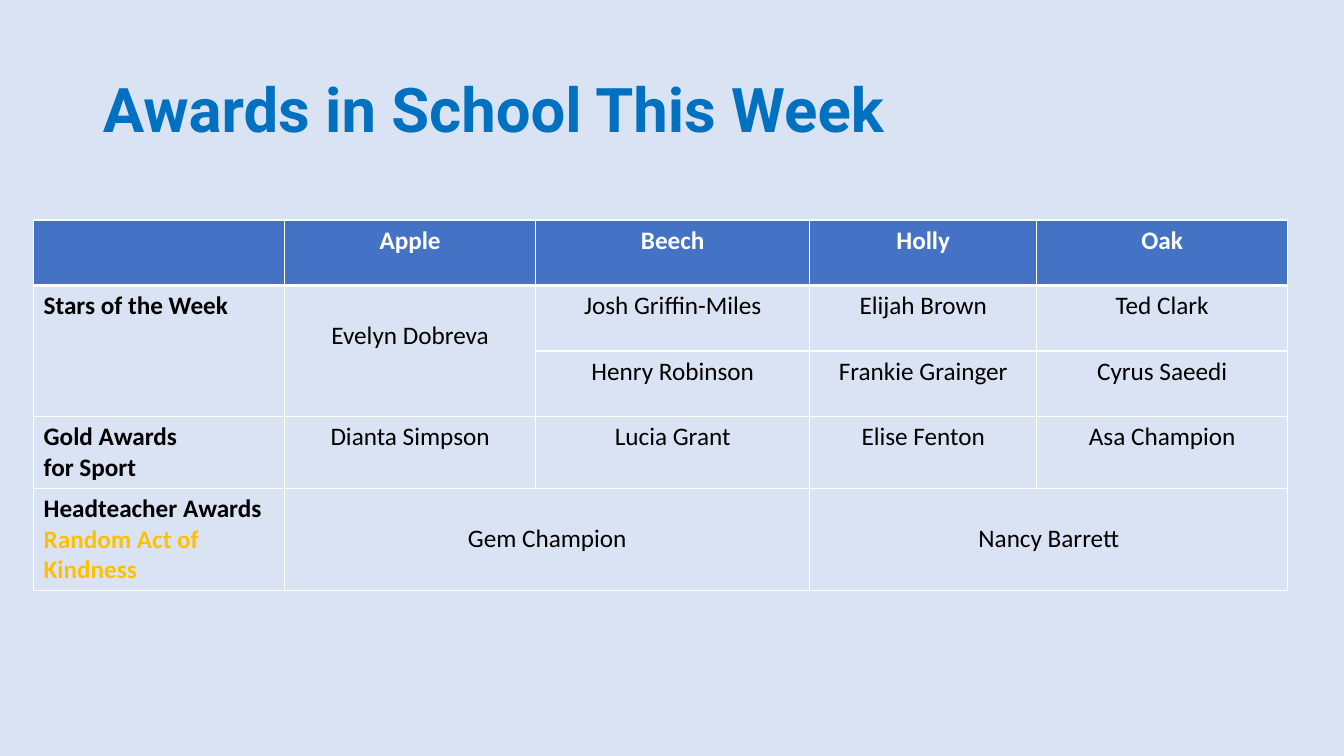
from lxml import etree
from pptx import Presentation
from pptx import util as u
from pptx.dml.color import RGBColor
from pptx.enum import text
from pptx.oxml import ns

PALE = RGBColor(0xDA, 0xE3, 0xF3)
BLUE = RGBColor(0x44, 0x72, 0xC4)
SKY = RGBColor(0x00, 0x70, 0xC0)
GOLD = RGBColor(0xFF, 0xC0, 0x00)
WHITE = RGBColor(0xFF, 0xFF, 0xFF)
BLACK = RGBColor(0, 0, 0)

WIDE, HIGH = u.Inches(13.33), u.Inches(7.5)
COLS = [2.49, 2.49, 2.72, 2.25, 2.49]
ROW = 0.65
LINE = 0.3

AWARDS = [
    ["", "Apple", "Beech", "Holly", "Oak"],
    ["Stars of the Week", "Evelyn Dobreva", "Josh Griffin-Miles", "Elijah Brown", "Ted Clark"],
    ["", "", "Henry Robinson", "Frankie Grainger", "Cyrus Saeedi"],
    ["Gold Awards\nfor Sport", "Dianta Simpson", "Lucia Grant", "Elise Fenton", "Asa Champion"],
    ["Headteacher Awards ", "Gem Champion", "", "Nancy Barrett", ""],
]
MERGES = [((1, 0), (2, 0)), ((1, 1), (2, 1)), ((4, 1), (4, 2)), ((4, 3), (4, 4))]
LOWERED = [(1, 1), (4, 1), (4, 3)]


def set_font(font, name, size, color, bold):
    font.name, font.size, font.bold = name, u.Pt(size), bold
    font.color.rgb = color


def add_title(slide, words):
    title = slide.shapes.title
    title.left, title.top = int(WIDE * 0.069), int(HIGH * 0.053)
    title.width, title.height = int(WIDE * 0.863), int(HIGH * 0.193)
    frame = title.text_frame
    frame.text = words
    frame.auto_size = text.MSO_AUTO_SIZE.NONE
    frame.vertical_anchor = text.MSO_ANCHOR.MIDDLE
    para = frame.paragraphs[0]
    para.alignment = text.PP_ALIGN.LEFT
    para.line_spacing = 0.9
    set_font(para.font, "Roboto", 44, SKY, True)


def add_edges(cell, row):
    props = cell._tc.get_or_add_tcPr()
    heavy = {0: "lnB", 1: "lnT"}.get(row)
    for side in ("lnL", "lnR", "lnT", "lnB"):
        points = 3 if side == heavy else 1
        edge = etree.SubElement(props, ns.qn("a:" + side), w=str(u.Pt(points)))
        fill = etree.SubElement(edge, ns.qn("a:solidFill"))
        etree.SubElement(fill, ns.qn("a:srgbClr"), val=str(WHITE))


def fill_cell(cell, row, col, words):
    add_edges(cell, row)
    cell.fill.solid()
    cell.fill.fore_color.rgb = PALE if row else BLUE
    if (row, col) in LOWERED:
        cell.margin_top = u.Inches(0.05 + LINE)
    if not words:
        return
    cell.text_frame.text = words
    for para in cell.text_frame.paragraphs:
        para.alignment = text.PP_ALIGN.CENTER if col else text.PP_ALIGN.LEFT
        set_font(para.font, "Calibri", 18, BLACK if row else WHITE, row == 0 or col == 0)


def add_awards(slide):
    frame = slide.shapes.add_table(
        len(AWARDS), len(COLS), int(WIDE * 0.025), int(HIGH * 0.291),
        u.Inches(sum(COLS)), u.Inches(ROW * len(AWARDS)))
    table = frame.table
    table.horz_banding = False
    for col, width in enumerate(COLS):
        table.columns[col].width = u.Inches(width)
    for row, names in enumerate(AWARDS):
        table.rows[row].height = u.Inches(ROW)
        for col, words in enumerate(names):
            fill_cell(table.cell(row, col), row, col, words)
    for first, last in MERGES:
        table.cell(*first).merge(table.cell(*last))
    kind = table.cell(4, 0).text_frame.paragraphs[0].add_run()
    kind.text = "Random Act of Kindness"
    kind.font.color.rgb = GOLD


def main():
    deck = Presentation()
    deck.slide_width, deck.slide_height = WIDE, HIGH
    slide = deck.slides.add_slide(deck.slide_layouts[5])
    slide.background.fill.solid()
    slide.background.fill.fore_color.rgb = PALE
    add_title(slide, "Awards in School This Week")
    add_awards(slide)
    deck.save("out.pptx")


if __name__ == "__main__":
    main()
